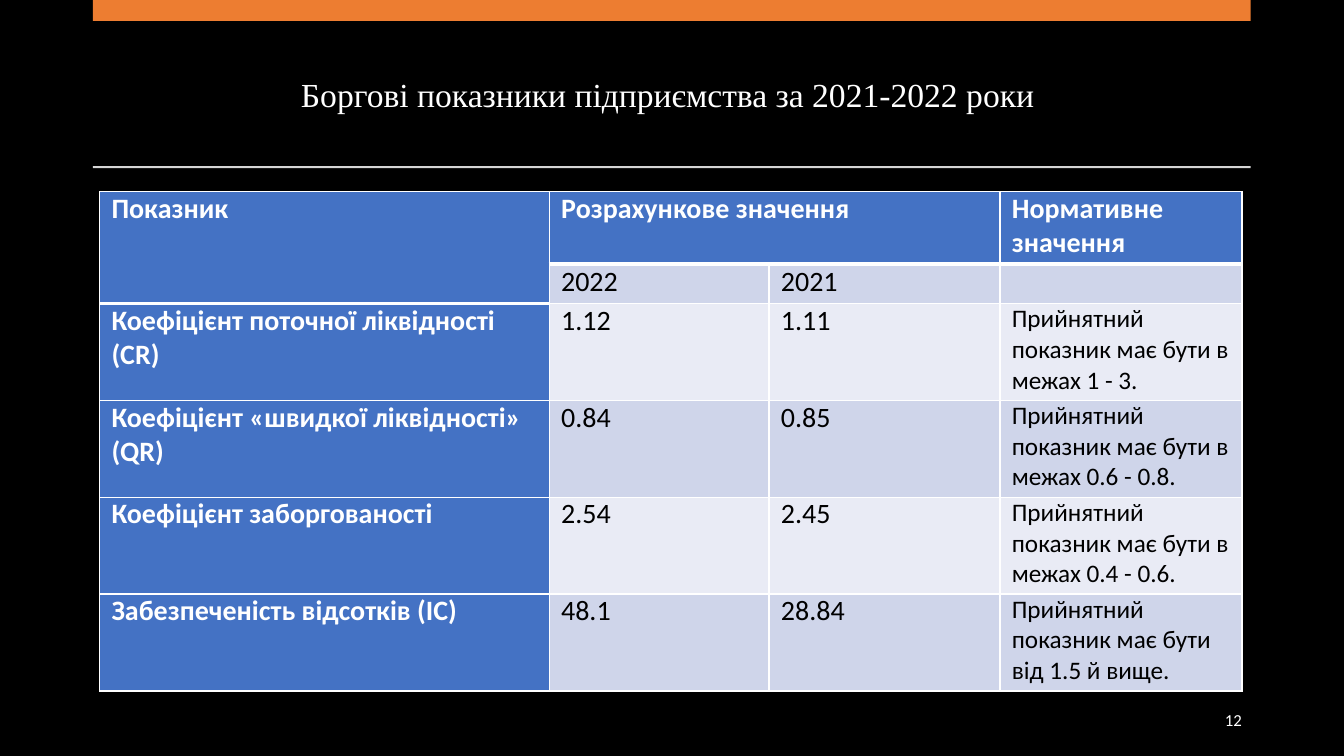
from lxml.etree import SubElement
from pptx import Presentation
from pptx.dml.color import RGBColor
from pptx.enum.shapes import MSO_SHAPE
from pptx.enum.text import MSO_ANCHOR, PP_ALIGN
from pptx.oxml.ns import qn
from pptx.util import Cm, Pt

BLACK = RGBColor(0x00, 0x00, 0x00)
WHITE = RGBColor(0xFF, 0xFF, 0xFF)
ORANGE = RGBColor(0xED, 0x7D, 0x31)
GREY = RGBColor(0xD5, 0xD5, 0xD5)
BLUE = RGBColor(0x44, 0x72, 0xC4)
BANDS = [RGBColor(0xE9, 0xEB, 0xF5), RGBColor(0xCF, 0xD5, 0xEA)]

LEFT, WIDTH = 2.34, 29.18
COLUMNS = [11.33, 5.54, 5.82, 6.1]
ROWS = [1.83, 0.99] + [2.44] * 4
NORM = "Прийнятний показник має бути "
RATIOS = [
    ["Показник", "Розрахункове значення", "", "Нормативне значення"],
    ["", "2022", "2021", ""],
    ["Коефіцієнт поточної ліквідності (CR)", "1.12", "1.11", NORM + "в межах 1 - 3."],
    ["Коефіцієнт «швидкої ліквідності» (QR)", "0.84", "0.85", NORM + "в межах 0.6 - 0.8."],
    ["Коефіцієнт заборгованості", "2.54", "2.45", NORM + "в межах 0.4 - 0.6."],
    ["Забезпеченість відсотків (IC)", "48.1", "28.84", NORM + "від 1.5 й вище."],
]


class SlideBuilder:
    def __init__(self, s, font="Calibri"):
        self.s = s
        self.font = font
        s.background.fill.solid()
        s.background.fill.fore_color.rgb = BLACK

    def style(self, p, size, color, bold=False, font=None):
        for r in p.runs:
            r.font.name = font or self.font
            r.font.size = Pt(size)
            r.font.bold = bold
            r.font.color.rgb = color

    def bar(self, top, height, color):
        sp = self.s.shapes.add_shape(
            MSO_SHAPE.RECTANGLE, Cm(LEFT), Cm(top), Cm(WIDTH), Cm(height))
        sp.shadow.inherit = False
        sp.fill.solid()
        sp.fill.fore_color.rgb = color
        sp.line.fill.background()

    def text(self, text, box, size, align, font=None):
        tf = self.s.shapes.add_textbox(*map(Cm, box)).text_frame
        tf.word_wrap = True
        tf.vertical_anchor = MSO_ANCHOR.MIDDLE
        p = tf.paragraphs[0]
        p.text = text
        p.alignment = align
        p.line_spacing = 0.9
        self.style(p, size, WHITE, font=font)

    def borders(self, cell, top, bottom):
        tcPr = cell._tc.get_or_add_tcPr()
        for side, width in zip("LRTB", (1, 1, top, bottom)):
            ln = SubElement(tcPr, qn("a:ln" + side), w=str(Pt(width)))
            fill = SubElement(ln, qn("a:solidFill"))
            SubElement(fill, qn("a:srgbClr"), val=str(WHITE))

    def table(self, data, left, top, widths, heights):
        table = self.s.shapes.add_table(
            len(heights), len(widths), Cm(left), Cm(top),
            Cm(sum(widths)), Cm(sum(heights))).table
        for column, width in zip(table.columns, widths):
            column.width = Cm(width)
        for row, height in zip(table.rows, heights):
            row.height = Cm(height)
        for i, row in enumerate(data):
            for j, text in enumerate(row):
                self.cell(table.cell(i, j), text, i, j)
        table.cell(0, 0).merge(table.cell(1, 0))
        table.cell(0, 1).merge(table.cell(0, 2))

    def cell(self, cell, text, i, j):
        # Thick rule under the header, which is two rows deep in the first column
        depth = 2 if j == 0 else 1
        self.borders(cell, 3 if i == depth else 1, 3 if i < depth else 1)
        heading = i == 0 or j == 0
        cell.fill.solid()
        cell.fill.fore_color.rgb = BLUE if heading else BANDS[i % 2]
        cell.margin_left = cell.margin_right = Cm(0.3)
        cell.margin_top = cell.margin_bottom = 0
        cell.text_frame.text = text
        size = 18 if j == 3 and not heading else 20
        self.style(cell.text_frame.paragraphs[0], size,
                   WHITE if heading else BLACK, bold=heading)


def main():
    prs = Presentation()
    prs.slide_width, prs.slide_height = Cm(33.87), Cm(19.05)
    slide = SlideBuilder(prs.slides.add_slide(prs.slide_layouts[6]))

    # Title between the accent bar and the rule
    slide.text("Боргові показники підприємства за 2021-2022 роки ",
               (LEFT, 0.94, WIDTH, 3), 24, PP_ALIGN.CENTER, "Times New Roman")
    slide.bar(0, 0.53, ORANGE)
    slide.bar(4.19, 0.05, GREY)

    # Debt ratios
    slide.table(RATIOS, 2.51, 4.83, COLUMNS, ROWS)

    # Slide number
    slide.text("12", (23.93, 17.65, 7.62, 1.02), 12, PP_ALIGN.RIGHT)

    prs.save("out.pptx")


if __name__ == "__main__":
    main()
